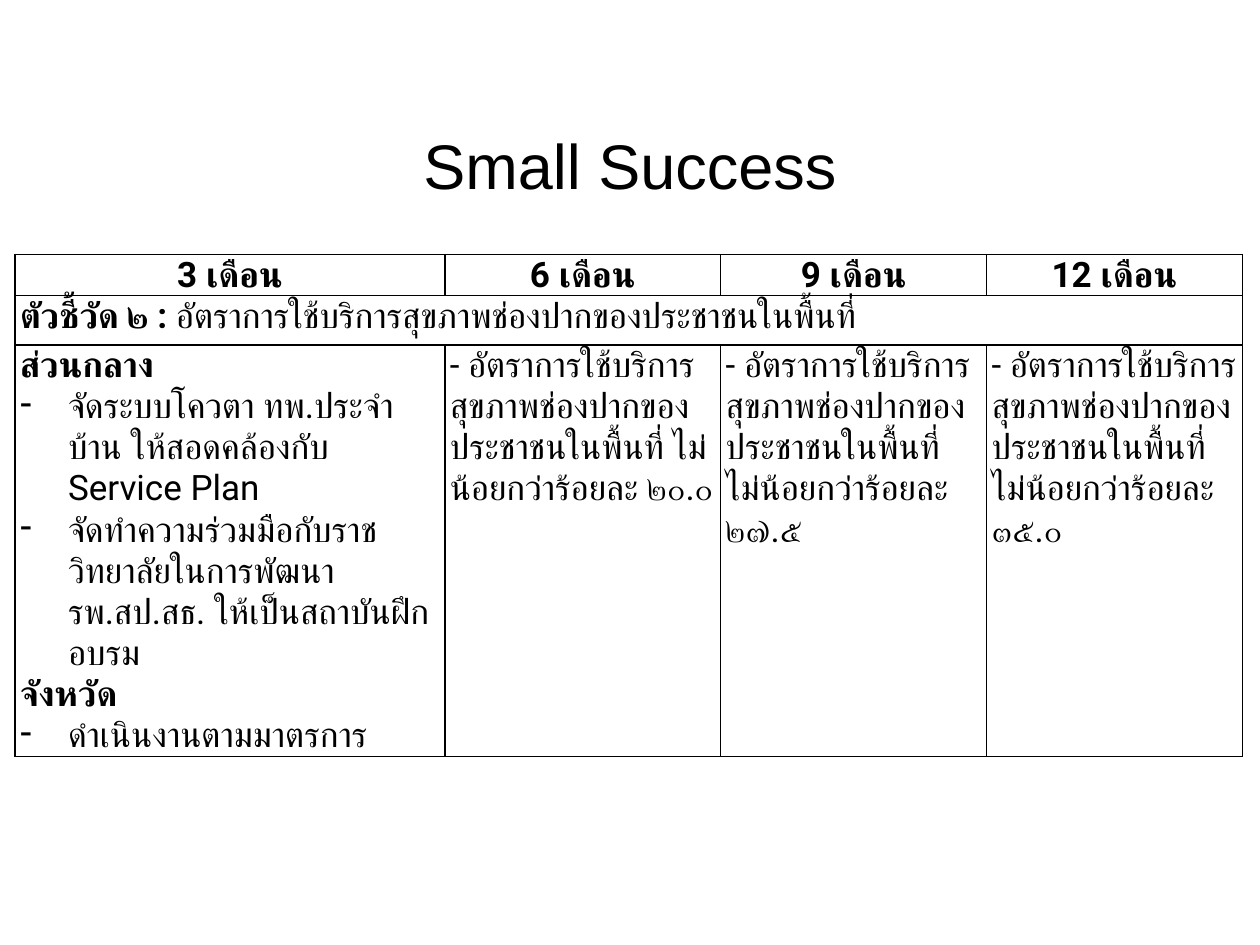
"""Build the Small Success slide: a title over a table of quarterly targets."""
from dataclasses import dataclass

from pptx import Presentation
from pptx.dml.color import RGBColor
from pptx.enum.lang import MSO_LANGUAGE_ID
from pptx.enum.text import MSO_ANCHOR, PP_ALIGN
from pptx.oxml.ns import qn
from pptx.util import Inches, Pt
from lxml.etree import SubElement


@dataclass(frozen=True)
class Theme:
    ink: RGBColor = RGBColor(0, 0, 0)
    title_font: str = "Arial"
    title_size: int = 36
    table_font: str = "Roboto"
    table_size: int = 20
    border: int = 1


theme = Theme()


def add_text(p, text, font, size, bold=False):
    r = p.add_run()
    r.text = text
    values = {"name": font, "size": Pt(size), "bold": bold,
              "language_id": MSO_LANGUAGE_ID.THAI}
    for key, value in values.items():
        setattr(r.font, key, value)
    r.font.color.rgb = theme.ink
    SubElement(r.font._element, qn("a:cs"), typeface=font)


def format_cell(cell):
    values = {"margin_left": Inches(0.04), "margin_right": Inches(0.04),
              "margin_top": 0, "margin_bottom": 0,
              "vertical_anchor": MSO_ANCHOR.TOP}
    for key, value in values.items():
        setattr(cell, key, value)
    tc_pr = cell._tc.get_or_add_tcPr()
    for side in ("lnL", "lnR", "lnT", "lnB"):
        ln = SubElement(tc_pr, qn(f"a:{side}"), w=str(Pt(theme.border)))
        fill = SubElement(ln, qn("a:solidFill"))
        SubElement(fill, qn("a:srgbClr"), val=str(theme.ink))
    cell.fill.background()


prs = Presentation()
prs.slide_width, prs.slide_height = Inches(10), Inches(7.5)
s = prs.slides.add_slide(prs.slide_layouts[5])

title = s.shapes.title
box = {"left": 0.5, "top": 0.76, "width": 9, "height": 1.09}
for key, value in box.items():
    setattr(title, key, Inches(value))
tf = title.text_frame
tf.vertical_anchor = MSO_ANCHOR.MIDDLE
p = tf.paragraphs[0]
p.alignment = PP_ALIGN.CENTER
add_text(p, "Small Success", theme.title_font, theme.title_size)

widths = [3.41, 2.19, 2.11, 2.03]
heights = [0.26, 0.39, 3.22]
table = s.shapes.add_table(
    len(heights), len(widths), Inches(0.12), Inches(2.02),
    Inches(sum(widths)), Inches(sum(heights))).table
for column, width in zip(table.columns, widths):
    column.width = Inches(width)
for row, height in zip(table.rows, heights):
    row.height = Inches(height)
for cell in table.iter_cells():
    format_cell(cell)

for column, month in enumerate((3, 6, 9, 12)):
    p = table.cell(0, column).text_frame.paragraphs[0]
    p.alignment = PP_ALIGN.CENTER
    add_text(p, f"{month} เดือน", theme.table_font, theme.table_size, True)

indicator = table.cell(1, 0)
indicator.merge(table.cell(1, len(widths) - 1))
p = indicator.text_frame.paragraphs[0]
add_text(p, "ตัวชี้วัด ๒ : ", theme.table_font, theme.table_size, True)
add_text(p, "อัตราการใช้บริการสุขภาพช่องปากของประชาชนในพื้นที่",
         theme.table_font, theme.table_size)

actions = [
    ("ส่วนกลาง", True),
    ("จัดระบบโควตา ทพ.ประจำบ้าน ให้สอดคล้องกับ Service Plan", False),
    ("จัดทำความร่วมมือกับราชวิทยาลัยในการพัฒนา รพ.สป.สธ. ให้เป็นสถาบันฝึกอบรม", False),
    ("จังหวัด", True),
    ("ดำเนินงานตามมาตรการ", False),
]
tf = table.cell(2, 0).text_frame
for i, (text, heading) in enumerate(actions):
    p = tf.add_paragraph() if i else tf.paragraphs[0]
    if not heading:
        p_pr = p._p.get_or_add_pPr()
        p_pr.set("marL", str(Inches(0.38)))
        p_pr.set("indent", str(-Inches(0.38)))
        SubElement(p_pr, qn("a:buChar"), char="-")
    add_text(p, text, theme.table_font, theme.table_size, heading)

for column, target in enumerate(("๒๐.๐", "๒๗.๕", "๓๕.๐"), start=1):
    p = table.cell(2, column).text_frame.paragraphs[0]
    add_text(p, "- อัตราการใช้บริการสุขภาพช่องปากของประชาชนในพื้นที่ "
             f"ไม่น้อยกว่าร้อยละ {target}", theme.table_font, theme.table_size)

prs.save("out.pptx")
